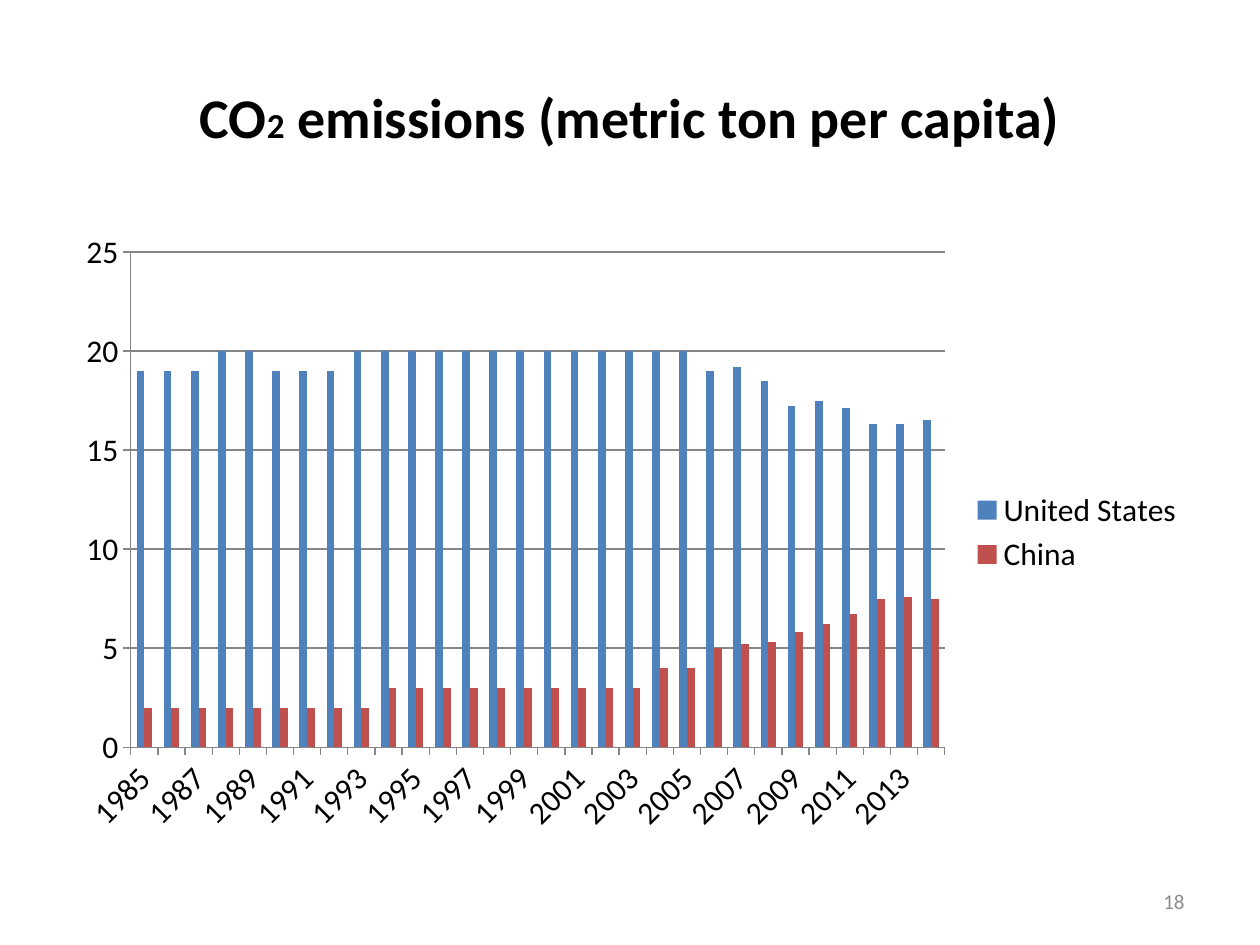
from pptx import Presentation
from pptx import util as u
from pptx.chart import data as cd
from pptx.dml import color as dc
from pptx.enum import chart as ce
from pptx.enum import text as te

FONT = "Calibri"
HUES = {"ink": "000000", "page": "8C8C8C", "grid": "868686",
        "United States": "4F81BD", "China": "C0504D"}
YEARS = [str(year) for year in range(1985, 2015)]
RATES = {
    "United States": [19] * 3 + [20] * 2 + [19] * 3 + [20] * 13
    + [19, 19.2, 18.5, 17.2, 17.5, 17.1, 16.3, 16.3, 16.5],
    "China": [2] * 9 + [3] * 10 + [4] * 2
    + [5, 5.2, 5.3, 5.8, 6.2, 6.7, 7.5, 7.6, 7.5],
}


def hue(name):
    """Return the named colour."""
    return dc.RGBColor.from_string(HUES[name])


def style(font, size, name="ink", bold=False):
    """Set the face, size, colour and weight of a font."""
    font.name, font.size, font.bold = FONT, u.Pt(size), bold
    font.color.rgb = hue(name)


def add_text(slide, box, align):
    """Add a wrapped, middle-anchored text box and return its paragraph."""
    frame = slide.shapes.add_textbox(*map(u.Inches, box)).text_frame
    frame.word_wrap = True
    frame.vertical_anchor = te.MSO_ANCHOR.MIDDLE
    para = frame.paragraphs[0]
    para.alignment = align
    return para


def add_title(slide, box):
    """Add the heading with its small formula digit."""
    para = add_text(slide, box, te.PP_ALIGN.CENTER)
    style(para.font, 32, bold=True)
    for part, size in (("CO", 32), ("2", 20),
                       (" emissions (metric ton per capita)", 32)):
        run = para.add_run()
        run.text = part
        run.font.size = u.Pt(size)


def add_page(slide, box, number):
    """Add the page number."""
    para = add_text(slide, box, te.PP_ALIGN.RIGHT)
    para.text = number
    style(para.font, 12, "page")


def add_rates(slide, box):
    """Add the clustered columns of emissions by year."""
    data = cd.CategoryChartData()
    data.categories = YEARS
    for name, rates in RATES.items():
        data.add_series(name, rates)
    chart = slide.shapes.add_chart(
        ce.XL_CHART_TYPE.COLUMN_CLUSTERED, *map(u.Inches, box), data).chart
    style(chart.font, 18)
    chart.has_title = False
    chart.has_legend = True
    chart.legend.position = ce.XL_LEGEND_POSITION.RIGHT
    chart.legend.include_in_layout = False

    plot = chart.plots[0]
    plot.gap_width, plot.overlap = 150, 0
    plot.vary_by_categories = False
    for series in plot.series:
        series.format.fill.solid()
        series.format.fill.fore_color.rgb = hue(series.name)

    years, scale = chart.category_axis, chart.value_axis
    scale.minimum_scale, scale.maximum_scale, scale.major_unit = 0, 25, 5
    scale.has_major_gridlines = True
    for axis in (years, scale):
        axis.major_tick_mark = ce.XL_TICK_MARK.OUTSIDE
    for part in (years, scale, scale.major_gridlines):
        part.format.line.color.rgb = hue("grid")
        part.format.line.width = u.Pt(0.75)


def main():
    """Build and save the slide."""
    deck = Presentation()
    deck.slide_width, deck.slide_height = u.Inches(10), u.Inches(7.5)
    slide = deck.slides.add_slide(deck.slide_layouts[6])
    add_title(slide, (0.5, 0.3, 9, 1.25))
    add_rates(slide, (0.5, 1.75, 9, 4.95))
    add_page(slide, (7.17, 6.95, 2.33, 0.4), "18")
    deck.save("out.pptx")


if __name__ == "__main__":
    main()
